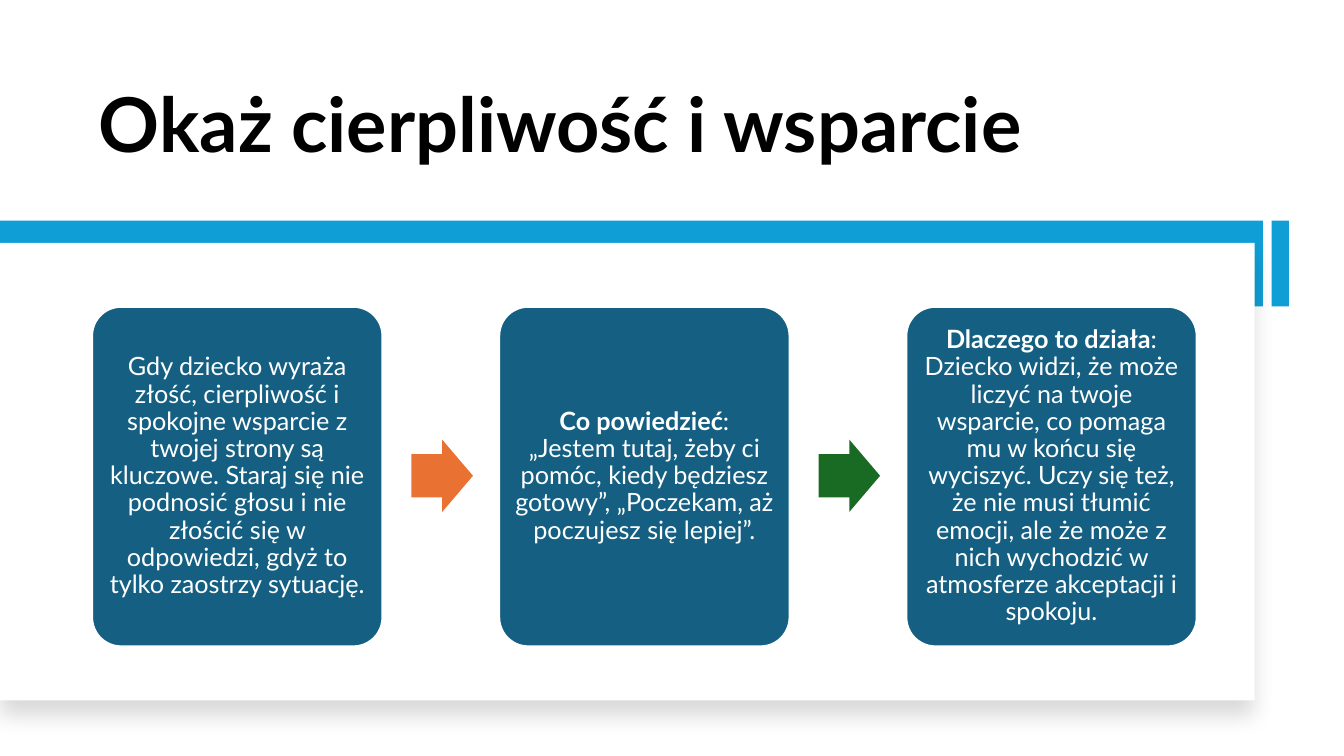
from lxml import etree
from pptx import Presentation
from pptx.dml.color import RGBColor
from pptx.enum.shapes import MSO_SHAPE
from pptx.enum.text import MSO_ANCHOR, MSO_AUTO_SIZE, PP_ALIGN
from pptx.oxml.ns import qn
from pptx.util import Cm, Pt

RECT = MSO_SHAPE.RECTANGLE
ROUNDED = MSO_SHAPE.ROUNDED_RECTANGLE
ARROW = MSO_SHAPE.RIGHT_ARROW
MIDDLE, BOTTOM = MSO_ANCHOR.MIDDLE, MSO_ANCHOR.BOTTOM
LEFT, CENTER = PP_ALIGN.LEFT, PP_ALIGN.CENTER
NO_AUTOFIT = MSO_AUTO_SIZE.NONE

BLACK = RGBColor(0x00, 0x00, 0x00)
WHITE = RGBColor(0xFF, 0xFF, 0xFF)
SKY = RGBColor(0x0F, 0x9E, 0xD5)
TEAL = RGBColor(0x15, 0x60, 0x82)
ORANGE = RGBColor(0xE9, 0x71, 0x32)
GREEN = RGBColor(0x19, 0x6B, 0x24)

STEPS = [
    ("", "Gdy dziecko wyraża złość, cierpliwość i spokojne wsparcie z twojej strony "
         "są kluczowe. Staraj się nie podnosić głosu i nie złościć się w odpowiedzi, "
         "gdyż to tylko zaostrzy sytuację."),
    ("Co powiedzieć", ": „Jestem tutaj, żeby ci pomóc, kiedy będziesz gotowy”, "
                      "„Poczekam, aż poczujesz się lepiej”."),
    ("Dlaczego to działa", ": Dziecko widzi, że może liczyć na twoje wsparcie, co pomaga "
                           "mu w końcu się wyciszyć. Uczy się też, że nie musi tłumić emocji, "
                           "ale że może z nich wychodzić w atmosferze akceptacji i spokoju."),
]
ARROW_COLORS = [ORANGE, GREEN]
CARD_LEFT, CARD_STEP = 2.32, 10.26
ARROW_LEFT = 10.37


class SlideBuilder:
    """Holds the slide and its font, and draws each kind of element."""

    def __init__(self, slide, font):
        self.slide = slide
        self.font = font

    def fill_text(self, frame, parts, size, color, align):
        frame.word_wrap = True
        frame.auto_size = NO_AUTOFIT
        paragraph = frame.paragraphs[0]
        paragraph.alignment = align
        paragraph.line_spacing = 0.9
        for text, bold in parts:
            run = paragraph.add_run()
            run.text = text
            run.font.name = self.font
            run.font.size = Pt(size)
            run.font.bold = bold
            run.font.color.rgb = color

    def title(self, text, left, top, width, height):
        title = self.slide.shapes.title
        title.left, title.top = Cm(left), Cm(top)
        title.width, title.height = Cm(width), Cm(height)
        title.text_frame.vertical_anchor = BOTTOM
        self.fill_text(title.text_frame, [(text, True)], 54, BLACK, LEFT)

    def block(self, kind, left, top, width, height, fill):
        block = self.slide.shapes.add_shape(kind, Cm(left), Cm(top), Cm(width), Cm(height))
        block.shadow.inherit = False
        block.fill.solid()
        block.fill.fore_color.rgb = fill
        block.line.fill.background()
        return block

    def panel(self, left, top, width, height):
        panel = self.block(RECT, left, top, width, height, WHITE)
        effects = panel.element.spPr.find(qn("a:effectLst"))
        shadow = etree.SubElement(effects, qn("a:outerShdw"), blurRad=str(Pt(15)),
                                  dist=str(Pt(11)), dir="5400000", algn="t", rotWithShape="0")
        color = etree.SubElement(shadow, qn("a:srgbClr"), val=str(BLACK))
        etree.SubElement(color, qn("a:alpha"), val="15000")

    def card(self, left, heading, body):
        card = self.block(ROUNDED, left, 7.73, 7.32, 8.56, TEAL)
        card.adjustments[0] = 0.1
        card.line.color.rgb = WHITE
        card.line.width = Pt(1.5)
        frame = card.text_frame
        frame.vertical_anchor = MIDDLE
        frame.margin_left = frame.margin_right = Cm(0.18)
        frame.margin_top = frame.margin_bottom = Cm(0.18)
        parts = [(heading, True), (body, False)] if heading else [(body, False)]
        self.fill_text(frame, parts, 18, WHITE, CENTER)

    def arrow(self, left, color):
        arrow = self.block(ARROW, left, 11.08, 1.55, 1.82, color)
        arrow.adjustments[0] = 0.6
        arrow.adjustments[1] = 0.5


def main():
    presentation = Presentation()
    presentation.slide_width, presentation.slide_height = Cm(33.87), Cm(19.05)
    slide = presentation.slides.add_slide(presentation.slide_layouts[5])
    builder = SlideBuilder(slide, "Lato")

    builder.title("Okaż cierpliwość i wsparcie", 2.24, 1.07, 25.65, 3.3)
    builder.block(RECT, 32.05, 5.56, 0.43, 2.16, SKY)
    builder.block(RECT, 0, 5.56, 31.83, 2.16, SKY)
    builder.panel(0, 6.12, 31.62, 11.53)

    for index, (heading, body) in enumerate(STEPS):
        builder.card(CARD_LEFT + index * CARD_STEP, heading, body)
    for index, color in enumerate(ARROW_COLORS):
        builder.arrow(ARROW_LEFT + index * CARD_STEP, color)

    presentation.save("out.pptx")


if __name__ == "__main__":
    main()
